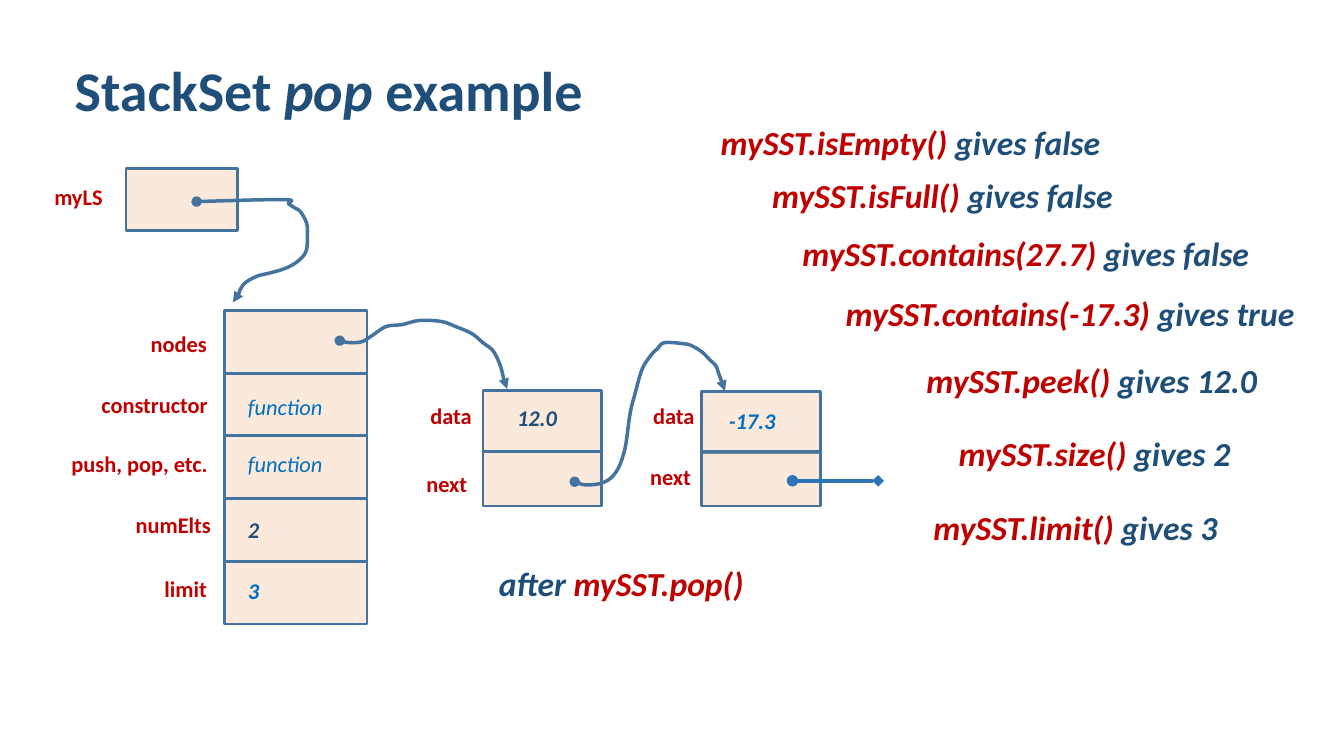
from lxml import etree
from pptx import Presentation, util as u
from pptx.dml.color import RGBColor
from pptx.enum import shapes, text
from pptx.oxml import ns

NAVY, RED, BLUE, EDGE, PEACH = "1F4E79", "C00000", "0070C0", "43739E", "F4B183"

MYLS_CURVE = [(1.95, 2), (2.82, 1.98), (2.86, 2.02), (2.92, 2.06), (2.98, 2.1), (3.04, 2.21),
              (3.05, 2.32), (3.04, 2.48), (2.98, 2.57), (2.88, 2.64), (2.78, 2.68),
              (2.67, 2.71), (2.55, 2.74), (2.44, 2.8), (2.39, 2.86), (2.36, 2.93), (2.31, 3)]
NODES_CURVE = [(3.37, 3.38), (3.47, 3.4), (3.59, 3.39), (3.69, 3.33), (3.83, 3.24), (3.99, 3.22),
               (4.16, 3.18), (4.38, 3.19), (4.52, 3.24), (4.68, 3.31), (4.79, 3.4),
               (4.89, 3.48), (4.96, 3.62), (5, 3.77), (5.03, 3.86)]
NEXT_CURVE = [(5.7, 4.78), (5.8, 4.81), (5.94, 4.8), (6.05, 4.75), (6.13, 4.65), (6.18, 4.52),
              (6.21, 4.39), (6.25, 4.1), (6.3, 3.9), (6.37, 3.66), (6.46, 3.52), (6.52, 3.46),
              (6.59, 3.4), (6.78, 3.41), (6.86, 3.43), (6.96, 3.49), (7.04, 3.57),
              (7.1, 3.63), (7.13, 3.71), (7.17, 3.82), (7.19, 3.88)]


def rgb(value):
    """Return the colour for a hex string."""
    return RGBColor.from_string(value)


def add_xml(parent, tag, **attrs):
    """Append a drawing element to a parent."""
    return etree.SubElement(parent, ns.qn(tag), attrs)


def write(sp, runs, size=16, bold=True, italic=False, align=text.PP_ALIGN.LEFT):
    """Write (text, colour[, italic]) runs into one paragraph of a shape."""
    tf = sp.text_frame
    tf.word_wrap = True
    tf.auto_size = text.MSO_AUTO_SIZE.NONE
    tf.vertical_anchor = text.MSO_ANCHOR.TOP
    p = tf.paragraphs[0]
    p.alignment = align
    for words, color, *slant in runs:
        r = p.add_run()
        r.text = words
        r.font.name, r.font.size = "Calibri", u.Pt(size)
        r.font.bold, r.font.italic = bold, slant[0] if slant else italic
        r.font.color.rgb = rgb(color)


def add_text(s, left, top, width, height, runs, **fmt):
    """Add a text box with formatted runs."""
    sp = s.shapes.add_textbox(*map(u.Inches, (left, top, width, height)))
    write(sp, runs, **fmt)


def add_cell(s, left, top, width, height):
    """Add a translucent memory cell."""
    sp = s.shapes.add_shape(shapes.MSO_SHAPE.RECTANGLE,
                            *map(u.Inches, (left, top, width, height)))
    sp.shadow.inherit = False
    sp.fill.solid()
    sp.fill.fore_color.rgb = rgb(PEACH)
    add_xml(sp.fill._xPr.find(".//" + ns.qn("a:srgbClr")), "a:alpha", val="28000")
    sp.line.color.rgb = rgb(EDGE)
    sp.line.width = u.Pt(2)


def style_pointer(sp, color, width, tail):
    """Format a pointer line that starts with a dot."""
    sp.line.color.rgb = rgb(color)
    sp.line.width = u.Pt(width)
    ln = sp.line._get_or_add_ln()
    add_xml(ln, "a:headEnd", type="oval")
    add_xml(ln, "a:tailEnd", type=tail)


def smooth_points(points, steps=5):
    """Return Catmull-Rom points through the given ones."""
    padded = [points[0], *points, points[-1]]
    result = [points[0]]
    for a, b, c, d in zip(padded, padded[1:], padded[2:], padded[3:]):
        for step in range(1, steps + 1):
            t = step / steps
            result.append(tuple(
                (2 * q + (r - o) * t + (2 * o - 5 * q + 4 * r - v) * t ** 2
                 + (3 * q - o - 3 * r + v) * t ** 3) / 2
                for o, q, r, v in zip(a, b, c, d)))
    return result


def add_curve(s, points):
    """Add a curved pointer with an arrowhead."""
    emu = [(u.Inches(x), u.Inches(y)) for x, y in smooth_points(points)]
    builder = s.shapes.build_freeform(*emu[0])
    builder.add_line_segments(emu[1:], close=False)
    sp = builder.convert_to_shape()
    sp.shadow.inherit = False
    sp.fill.background()
    style_pointer(sp, EDGE, 2.5, "triangle")


def add_null_pointer(s, x1, x2, y):
    """Add a straight pointer that ends in a diamond."""
    sp = s.shapes.add_connector(shapes.MSO_CONNECTOR.STRAIGHT,
                                *map(u.Inches, (x1, y, x2, y)))
    style_pointer(sp, "2E75B6", 2.75, "diamond")
    add_xml(sp._element.spPr, "a:effectLst")


def add_object(s):
    """Add the stack object with its field labels and values."""
    fields = [("nodes", 2.15, 3.23, None), ("constructor", 2.16, 3.83, ("function", 3.85, BLUE)),
              ("push, pop, etc.", 2.16, 4.42, ("function", 4.42, BLUE)),
              ("numElts", 2.19, 5.02, ("2", 5.07, NAVY)), ("limit", 2.15, 5.66, ("3", 5.68, BLUE))]
    for i, (label, right, top, value) in enumerate(fields):
        add_cell(s, 2.23, 3.08 + 0.6225 * i, 1.41, 0.62)
        add_text(s, 0.4, top, right - 0.4, 0.45, [(label, RED)], align=text.PP_ALIGN.RIGHT)
        if value:
            words, value_top, color = value
            add_text(s, 2.36, value_top, 1.07, 0.45, [(words, color)],
                     bold=words != "function", italic=True)


def add_node(s, left, top, value, color, value_at, data_left, next_at):
    """Add a list node with its data and next cells."""
    add_cell(s, left, top, 1.18, 0.61)
    add_cell(s, left, 4.48, 1.18, 0.54)
    add_text(s, *value_at, 0.87, 0.51, [(value, color)], italic=True)
    add_text(s, data_left, 3.94, 0.74, 0.51, [("data", RED)])
    add_text(s, *next_at, 0.74, 0.51, [("next", RED)])


def main():
    """Build the slide and save it."""
    prs = Presentation()
    prs.slide_width, prs.slide_height = u.Inches(13.33), u.Inches(7.5)
    s = prs.slides.add_slide(prs.slide_layouts[5])
    title = s.shapes.title
    title.left, title.top, title.width, title.height = map(u.Inches, (0.64, 0.5, 7.73, 0.77))
    write(title, [("StackSet ", NAVY), ("pop", NAVY, True), (" example", NAVY)], size=40)
    add_text(s, 4.85, 5.54, 3.65, 0.5, [("after ", NAVY), ("mySST.pop()", RED)],
             size=24, italic=True)

    add_text(s, 0.44, 1.77, 0.84, 0.45, [("myLS", RED)])
    add_cell(s, 1.25, 1.67, 1.11, 0.62)
    add_object(s)
    add_node(s, 4.79, 3.87, "12.0", NAVY, (5.03, 3.96), 4.17, (4.13, 4.61))
    add_node(s, 6.96, 3.88, "-17.3", BLUE, (7.13, 3.99), 6.38, (6.35, 4.55))
    for points in (MYLS_CURVE, NODES_CURVE, NEXT_CURVE):
        add_curve(s, points)
    add_null_pointer(s, 7.86, 8.71, 4.77)

    calls = [("isEmpty()", "false", 7.05, 1.16, 4.72), ("isFull()", "false", 7.56, 1.69, 4.72),
             ("contains(27.7)", "false", 7.86, 2.26, 4.64),
             ("contains(-17.3)", "true", 8.29, 2.86, 4.66),
             ("peek()", "12.0", 9.09, 3.52, 3.65), ("size()", "2", 9.41, 4.25, 3.65),
             ("limit()", "3", 9.16, 4.98, 3.65)]
    for call, result, left, top, width in calls:
        add_text(s, left, top, width, 0.5,
                 [(f"mySST.{call} ", RED), (f"gives {result}", NAVY)], size=24, italic=True)
    prs.save("out.pptx")


if __name__ == "__main__":
    main()
